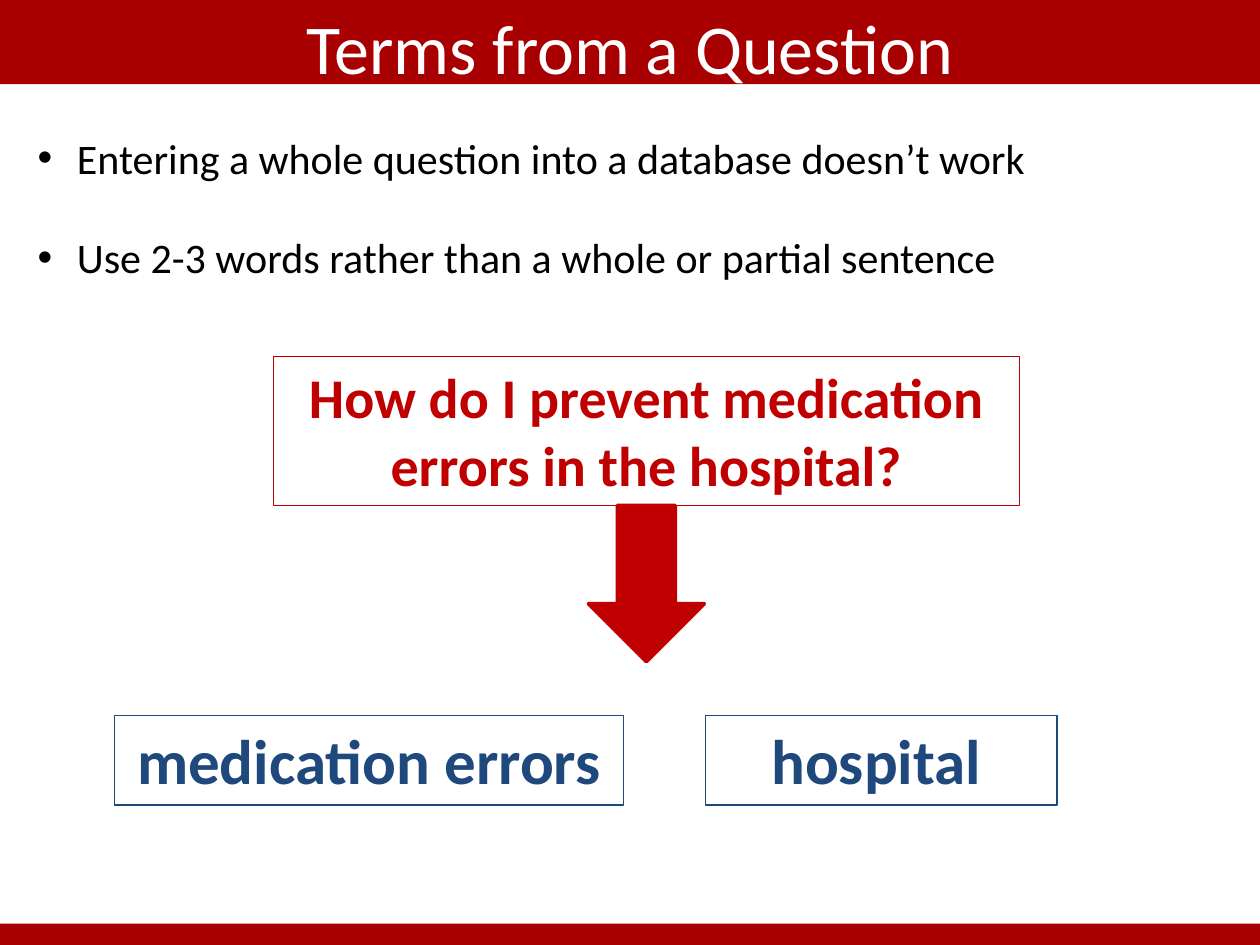
from lxml.etree import SubElement
from pptx import Presentation
from pptx.dml.color import RGBColor
from pptx.enum.shapes import MSO_SHAPE
from pptx.enum.text import MSO_ANCHOR, PP_ALIGN
from pptx.oxml.ns import qn
from pptx.util import Cm, Pt

TITLE = "Terms from a Question"
BULLETS = [
    "Entering a whole question into a database doesn’t work",
    "Use 2-3 words rather than a whole or partial sentence",
]
BAND, RED, BLUE = "A80000", "C00000", "1F497D"
BANDS = [(0, 1.7), (18.62, 0.43)]
QUESTION = ("How do I prevent medication errors in the hospital?",
            (5.51, 7.19, 15.04, 3), 32, RED, 0.25)
TERMS = [
    ("medication errors", (2.31, 14.43, 10.26, 1.8), 36, BLUE, 0.25),
    ("hospital", (14.22, 14.43, 7.09, 1.8), 36, BLUE, 0.45),
]
ARROW = (11.86, 10.19, 2.34, 3.15)


def color(value):
    return RGBColor.from_string(value)


def add_shape(page, kind, place, fill=None, line=None, width=0.75):
    shape = page.shapes.add_shape(kind, *map(Cm, place))
    shape.shadow.inherit = False
    if fill:
        shape.fill.solid()
        shape.fill.fore_color.rgb = color(fill)
    else:
        shape.fill.background()
    if line:
        shape.line.color.rgb = color(line)
        shape.line.width = Pt(width)
    else:
        shape.line.fill.background()
    return shape


def write(para, text, size=24, ink="000000", bold=False, align=PP_ALIGN.LEFT):
    para.text = text
    para.alignment = align
    para.font.name = "Calibri"
    para.font.size = Pt(size)
    para.font.bold = bold
    para.font.color.rgb = color(ink)


def add_label(page, text, place, size, ink, right_margin):
    frame = add_shape(page, MSO_SHAPE.RECTANGLE, place, line=ink).text_frame
    frame.word_wrap = True
    frame.vertical_anchor = MSO_ANCHOR.TOP
    frame.margin_right = Cm(right_margin)
    write(frame.paragraphs[0], text, size=size, ink=ink, bold=True, align=PP_ALIGN.CENTER)


def add_title(page):
    title = page.shapes.title
    title.left, title.top, title.width, title.height = map(Cm, (1.27, -0.05, 22.86, 1.96))
    title.text_frame.vertical_anchor = MSO_ANCHOR.MIDDLE
    write(title.text_frame.paragraphs[0], TITLE, size=40, ink="FFFFFF", align=PP_ALIGN.CENTER)
    title.element.getparent().append(title.element)


def add_bullets(page):
    frame = page.shapes.add_textbox(*map(Cm, (0.51, 2.54, 24.13, 3.33))).text_frame
    frame.word_wrap = True
    for index, text in enumerate(BULLETS):
        para = frame.add_paragraph() if index else frame.paragraphs[0]
        if index:
            para.space_before = Pt(28)
        properties = para._p.get_or_add_pPr()
        properties.set("marL", str(Cm(0.79)))
        properties.set("indent", str(Cm(-0.79)))
        SubElement(properties, qn("a:buFont"), typeface="Arial")
        SubElement(properties, qn("a:buChar"), char="•")
        write(para, text)


def main():
    """Build the slide on turning a question into search terms."""
    deck = Presentation()
    deck.slide_width, deck.slide_height = Cm(25.4), Cm(19.05)
    page = deck.slides.add_slide(deck.slide_layouts[5])
    for top, height in BANDS:
        add_shape(page, MSO_SHAPE.RECTANGLE, (0, top, 25.4, height), fill=BAND)
    add_title(page)
    add_bullets(page)
    add_label(page, *QUESTION)
    arrow = add_shape(page, MSO_SHAPE.DOWN_ARROW, ARROW, fill=RED, line=RED, width=2)
    SubElement(arrow.line._get_or_add_ln(), qn("a:round"))
    for term in TERMS:
        add_label(page, *term)
    deck.save("out.pptx")


if __name__ == "__main__":
    main()
